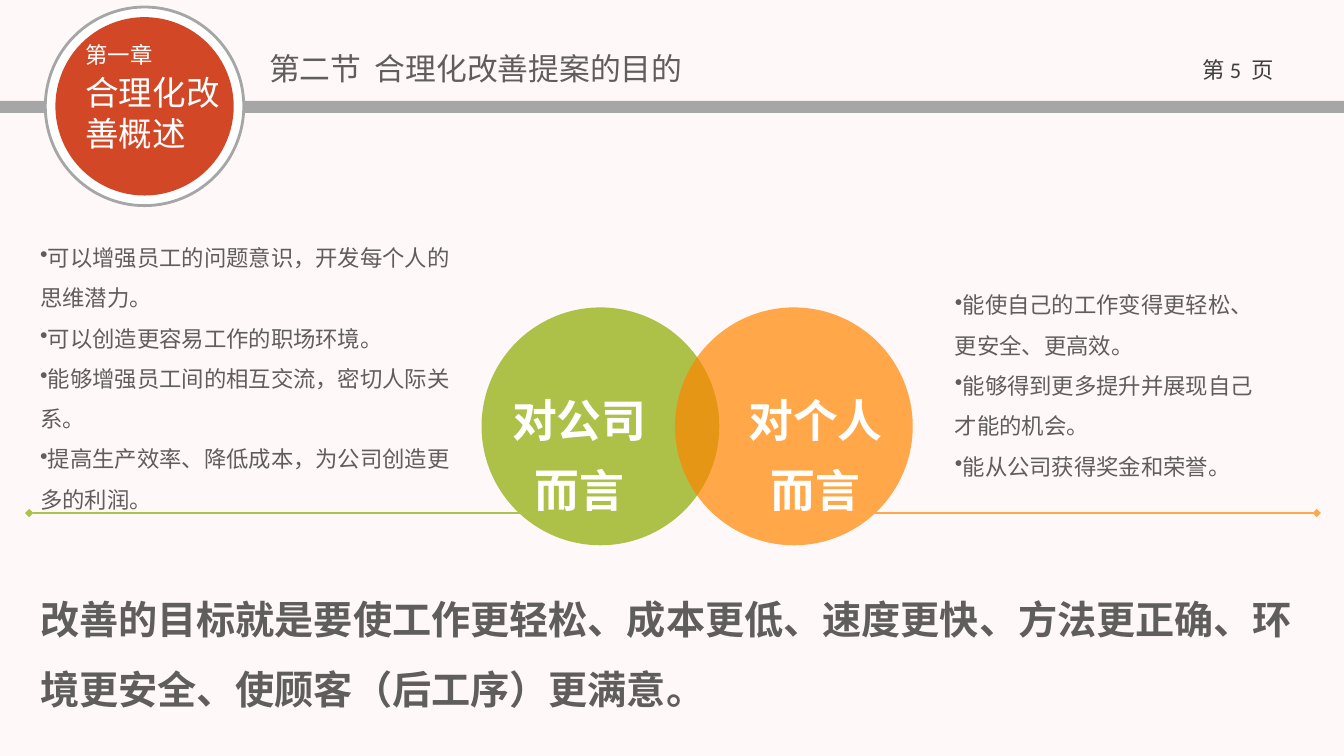
from lxml.etree import SubElement
from pptx import Presentation
from pptx.dml.color import RGBColor
from pptx.enum.shapes import MSO_CONNECTOR as Conn, MSO_SHAPE as Kind
from pptx.enum.text import MSO_ANCHOR as Anchor, MSO_AUTO_SIZE as Fit, PP_ALIGN as Align
from pptx.oxml.ns import qn
from pptx.util import Inches, Pt

PAPER = RGBColor(0xFF, 0xF8, 0xF8)
WHITE = RGBColor(0xFF, 0xFF, 0xFF)
GRAY = RGBColor(0xA6, 0xA6, 0xA6)
DARK = RGBColor(0x40, 0x40, 0x40)
INK = RGBColor(0x5F, 0x5E, 0x5C)
RED = RGBColor(0xD2, 0x47, 0x26)
GREEN = RGBColor(0x8B, 0xAB, 0x00)
ORANGE = RGBColor(0xFF, 0x85, 0x00)
LIME = RGBColor(0xAE, 0xC2, 0x4B)
PEACH = RGBColor(0xFF, 0xA8, 0x4B)


class Page:
    """Holds the slide and its style, and draws each kind of element."""

    face = "Noto Sans CJK SC"

    def __init__(self, deck):
        self.slide = deck.slides.add_slide(deck.slide_layouts[5])
        self.slide.background.fill.solid()
        self.slide.background.fill.fore_color.rgb = PAPER

    def shape(self, kind, box, color, edge=None, alpha=None):
        item = self.slide.shapes.add_shape(kind, *map(Inches, box))
        item.shadow.inherit = False
        item.fill.solid()
        item.fill.fore_color.rgb = color
        if alpha:
            tone = item.fill._xPr.find(qn("a:solidFill"))[0]
            SubElement(tone, qn("a:alpha"), val=str(alpha * 1000))
        if edge:
            item.line.color.rgb = edge
            item.line.width = Pt(2)
        else:
            item.line.fill.background()

    def style(self, run, size, color, bold=False, face=None):
        font = run.font
        font.size, font.bold = Pt(size), bold
        font.color.rgb = color
        font.name = face or self.face
        SubElement(run._r.get_or_add_rPr(), qn("a:ea"), typeface=self.face)

    def title(self, box, text, size, color):
        item = self.slide.shapes.title
        item.left, item.top, item.width, item.height = map(Inches, box)
        frame = item.text_frame
        frame.text = text
        frame.auto_size = Fit.NONE
        frame.vertical_anchor = Anchor.TOP
        frame.paragraphs[0].alignment = Align.LEFT
        self.style(frame.paragraphs[0].runs[0], size, color)

    def text(self, box, lines, size, color, bold=False, align=Align.LEFT,
             pitch=1.0, dot=False):
        frame = self.slide.shapes.add_textbox(*map(Inches, box)).text_frame
        frame.word_wrap = True
        frame.text = "\n".join(lines)
        for para in frame.paragraphs:
            para.alignment = align
            para.line_spacing = pitch
            if dot:
                SubElement(para._p.get_or_add_pPr(), qn("a:buChar"), char="•")
            self.style(para.runs[0], size, color, bold)
        return frame

    def line(self, left, right, y, color, end):
        item = self.slide.shapes.add_connector(
            Conn.STRAIGHT, Inches(left), Inches(y), Inches(right), Inches(y))
        item.line.color.rgb = color
        item.line.width = Pt(1.5)
        SubElement(item.line._get_or_add_ln(), qn(end), type="diamond")
        SubElement(item._element.spPr, qn("a:effectLst"))


def main():
    deck = Presentation()
    deck.slide_width, deck.slide_height = Inches(13.34), Inches(7.5)
    page = Page(deck)

    page.shape(Kind.RECTANGLE, (0, 1, 13.34, 0.12), GRAY)
    page.shape(Kind.OVAL, (0.45, 0.07, 1.97, 1.97), WHITE, edge=GRAY)
    page.shape(Kind.OVAL, (0.55, 0.17, 1.77, 1.77), RED)
    page.title((2.57, 0.44, 5.44, 0.47), "第二节  合理化改善提案的目的", 22, INK)

    count = page.text((11.69, 0.51, 1.2, 0.4), ["第 "], 16, DARK,
                      align=Align.CENTER).paragraphs[0]
    for part, face in (("5  ", "Calibri"), ("页", None)):
        run = count.add_run()
        run.text = part
        page.style(run, 16, DARK, face=face)

    head = page.text((0.75, 0.36, 1.73, 1.22), ["第一章", "合理化改善概述"], 16, WHITE)
    for para in head.paragraphs:
        para.space_after = Pt(3)
    head.paragraphs[1].runs[0].font.size = Pt(24)

    for left, color, box, label in (
            (4.78, GREEN, (4.89, 3.69, 1.72, 1.5), "对公司而言"),
            (6.7, ORANGE, (7.2, 3.69, 1.79, 1.43), "对个人而言")):
        page.shape(Kind.OVAL, (left, 3.05, 2.36, 2.36), color, alpha=70)
        page.text(box, [label], 32, WHITE, True, Align.CENTER, 1.3)

    firm = ["可以增强员工的问题意识，开发每个人的思维潜力。",
            "可以创造更容易工作的职场环境。",
            "能够增强员工间的相互交流，密切人际关系。",
            "提高生产效率、降低成本，为公司创造更多的利润。"]
    staff = ["能使自己的工作变得更轻松、更安全、更高效。",
             "能够得到更多提升并展现自己才能的机会。",
             "能从公司获得奖金和荣誉。"]
    for box, lines in (((0.3, 2.24, 4.4, 2.93), firm),
                       ((9.38, 2.71, 3.23, 2.12), staff)):
        page.text(box, lines, 16, INK, pitch=1.5, dot=True)

    page.line(0.29, 5.29, 5.09, LIME, "a:headEnd")
    page.line(8.56, 13.07, 5.09, PEACH, "a:tailEnd")

    goal = ("改善的目标就是要使工作更轻松、成本更低、速度更快、方法更正确、"
            "环境更安全、使顾客（后工序）更满意。")
    page.text((0.3, 5.62, 12.77, 1.51), [goal], 28, INK, True, pitch=1.5)

    deck.save("out.pptx")


if __name__ == "__main__":
    main()
